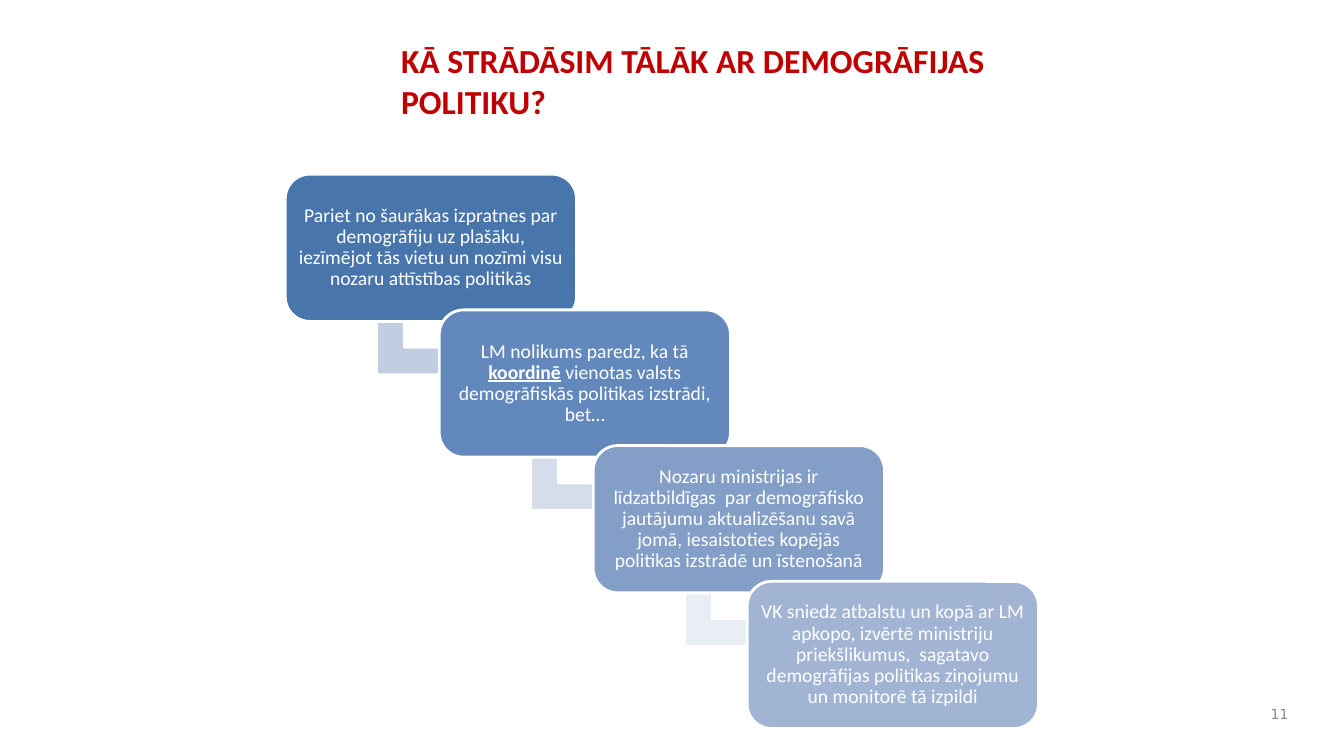
from pptx import Presentation
from pptx.dml.color import RGBColor
from pptx.enum.shapes import MSO_SHAPE as Shape
from pptx.enum.text import MSO_ANCHOR as Anchor, PP_ALIGN as Align
from pptx.util import Cm, Pt

COLORS = {
    "title": "C00000",
    "number": "898989",
    "white": "FFFFFF",
    "steps": ["4875AC", "6389BC", "839EC7", "A2B4D4"],
    "arrows": ["C2CDE1", "D6DDEA", "E9EDF4"],
}

# Each step is a list of (text, emphasised) pieces
STEPS = [
    [("Pariet no šaurākas izpratnes par demogrāfiju uz plašāku, iezīmējot tās "
      "vietu un nozīmi visu nozaru attīstības politikās", False)],
    [("LM nolikums paredz, ka tā ", False), ("koordinē", True),
     (" vienotas valsts demogrāfiskās politikas izstrādi, bet…", False)],
    [("Nozaru ministrijas ir līdzatbildīgas  par demogrāfisko jautājumu "
      "aktualizēšanu savā jomā, iesaistoties kopējās politikas izstrādē un "
      "īstenošanā", False)],
    [("VK sniedz atbalstu un kopā ar LM apkopo, izvērtē ministriju "
      "priekšlikumus,  sagatavo demogrāfijas politikas ziņojumu un monitorē "
      "tā izpildi", False)],
]

# Staircase geometry in centimetres
FIRST_LEFT, FIRST_TOP = 7.19, 4.39
STEP_RIGHT, STEP_DOWN = 3.88, 3.42
STEP_SIZE = (7.34, 3.71)
ARROW_RIGHT, ARROW_DOWN = 2.44, 2.97
ARROW_SIZE = (2.13, 2.41)


class StairSlide:
    def __init__(self, slide, font="Calibri"):
        self.slide = slide
        self.font = font

    def style_run(self, run, size, color, bold=False, font=None):
        run.font.name = font or self.font
        run.font.size = Pt(size)
        run.font.bold = bold
        run.font.color.rgb = RGBColor.from_string(color)

    def label(self, text, box, size, color, bold=False, font=None,
              align=Align.LEFT, anchor=Anchor.TOP):
        frame = self.slide.shapes.add_textbox(*map(Cm, box)).text_frame
        frame.word_wrap = True
        frame.vertical_anchor = anchor
        frame.text = text
        paragraph = frame.paragraphs[0]
        paragraph.alignment = align
        self.style_run(paragraph.runs[0], size, color, bold, font)

    def block(self, preset, box, fill, adjustments):
        block = self.slide.shapes.add_shape(preset, *map(Cm, box))
        block.shadow.inherit = False
        block.fill.solid()
        block.fill.fore_color.rgb = RGBColor.from_string(fill)
        block.line.color.rgb = RGBColor.from_string(COLORS["white"])
        block.line.width = Pt(2)
        for index, value in enumerate(adjustments):
            block.adjustments[index] = value
        return block

    def arrow(self, left, top, fill):
        arrow = self.block(Shape.BENT_UP_ARROW, (left, top, *ARROW_SIZE),
                           fill, (0.328, 0.25, 0.358))
        arrow.rotation = 90

    def step(self, left, top, fill, pieces):
        step = self.block(Shape.ROUNDED_RECTANGLE, (left, top, *STEP_SIZE),
                          fill, (0.167,))
        frame = step.text_frame
        frame.word_wrap = True
        frame.vertical_anchor = Anchor.MIDDLE
        frame.margin_left = frame.margin_right = Cm(0.15)
        frame.margin_top = frame.margin_bottom = Cm(0.15)
        paragraph = frame.paragraphs[0]
        paragraph.alignment = Align.CENTER
        paragraph.line_spacing = 0.9
        for text, emphasised in pieces:
            run = paragraph.add_run()
            run.text = text
            self.style_run(run, 14, COLORS["white"], emphasised)
            run.font.underline = emphasised


def main():
    deck = Presentation()
    deck.slide_width, deck.slide_height = Cm(33.87), Cm(19.05)
    stairs = StairSlide(deck.slides.add_slide(deck.slide_layouts[6]))

    # Title and page number
    stairs.label("KĀ STRĀDĀSIM TĀLĀK AR DEMOGRĀFIJAS POLITIKU?",
                 (9.86, 0.89, 16.94, 2.87), 24, COLORS["title"], bold=True)
    stairs.label("11", (31.6, 17.58, 1.12, 0.84), 10, COLORS["number"],
                 font="DejaVu Sans", align=Align.RIGHT, anchor=Anchor.MIDDLE)

    # Descending steps, each with an arrow to the next
    for index, pieces in enumerate(STEPS):
        left = FIRST_LEFT + index * STEP_RIGHT
        top = FIRST_TOP + index * STEP_DOWN
        if index < len(COLORS["arrows"]):
            stairs.arrow(left + ARROW_RIGHT, top + ARROW_DOWN,
                         COLORS["arrows"][index])
        stairs.step(left, top, COLORS["steps"][index], pieces)

    deck.save("out.pptx")


if __name__ == "__main__":
    main()
